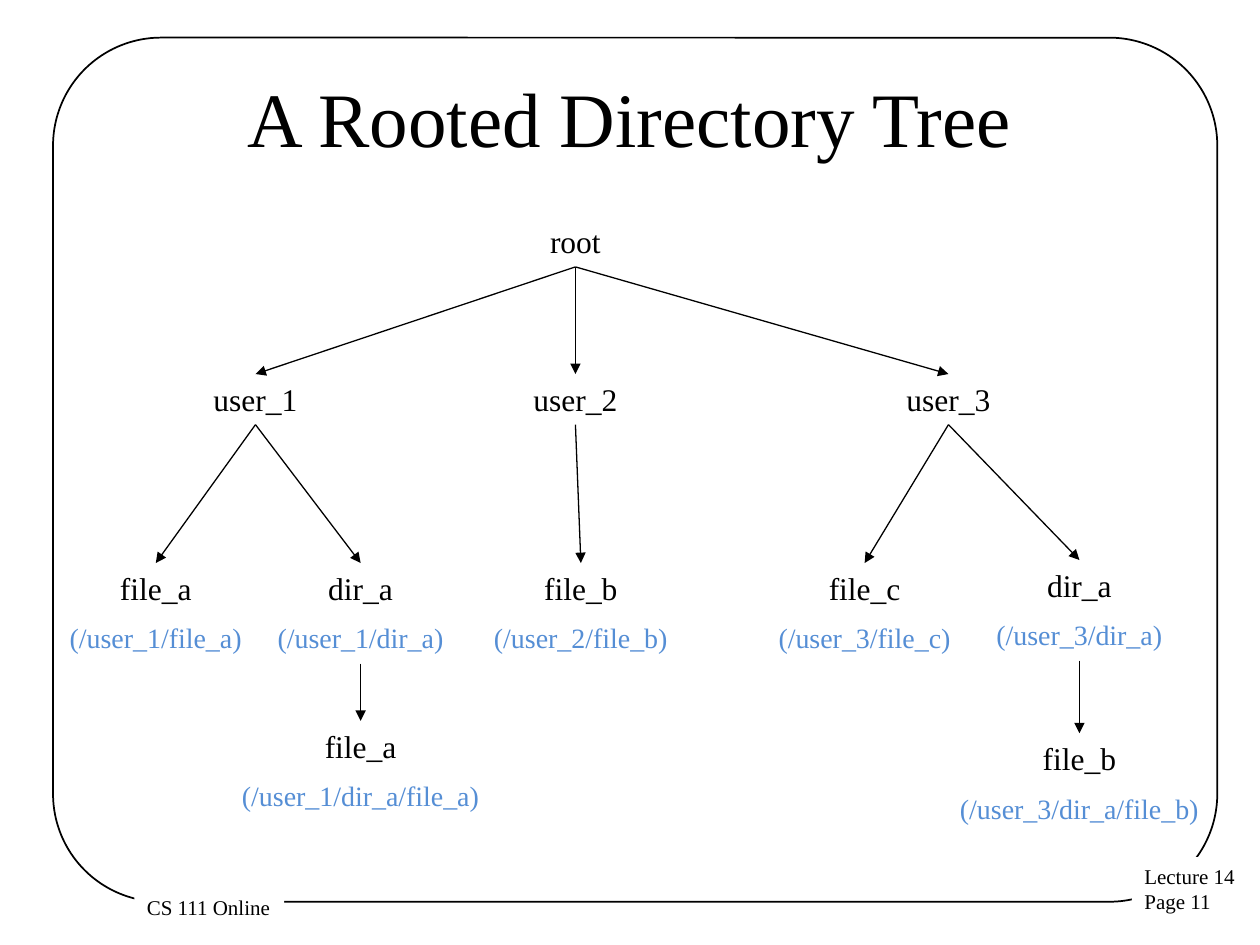
from lxml import etree
from pptx import Presentation
from pptx.dml.color import RGBColor
from pptx.enum.shapes import MSO_CONNECTOR, MSO_SHAPE
from pptx.enum.text import MSO_ANCHOR, PP_ALIGN
from pptx.oxml.ns import qn
from pptx.util import Cm, Pt

LINE = MSO_CONNECTOR.STRAIGHT
ROUND, RECT = MSO_SHAPE.ROUNDED_RECTANGLE, MSO_SHAPE.RECTANGLE
TOP, MIDDLE = MSO_ANCHOR.TOP, MSO_ANCHOR.MIDDLE
LEFT, CENTER = PP_ALIGN.LEFT, PP_ALIGN.CENTER
FONT, BLACK, BLUE, WHITE = "Times New Roman", "000000", "558ED5", "FFFFFF"
LOW, TALL = 1.02, 2.03

TITLE = "A Rooted Directory Tree"
FRAME = (1.07, 0.76, 23.47, 17.42)
LABELS = [
    (["Lecture 14", "Page 11"], (22.82, 17.28, 2.36, 1.3)),
    (["CS 111 Online"], (2.71, 17.91, 3.02, 0.76)),
]
NODES = [
    {"up": None, "name": "root", "mid": 11.6, "top": 4.36, "width": 2.34},
    {"up": "", "name": "user_1", "mid": 5.15, "top": 7.54, "width": 2.97},
    {"up": "", "name": "user_2", "mid": 11.6, "top": 7.54, "width": 2.97},
    {"up": "", "name": "user_3", "mid": 19.12, "top": 7.54, "width": 2.97},
    {"up": "/user_1", "name": "file_a", "mid": 3.14, "top": 11.35, "width": 5.28},
    {"up": "/user_1", "name": "dir_a", "mid": 7.27, "top": 11.35, "width": 4.24},
    {"up": "/user_2", "name": "file_b", "mid": 11.71, "top": 11.35, "width": 4.65},
    {"up": "/user_3", "name": "file_c", "mid": 17.43, "top": 11.35, "width": 4.65},
    {"up": "/user_3", "name": "dir_a", "mid": 21.76, "top": 11.29, "width": 4.45},
    {"up": "/user_1/dir_a", "name": "file_a", "mid": 7.27, "top": 14.53, "width": 7.62},
    {"up": "/user_3/dir_a", "name": "file_b", "mid": 21.76, "top": 14.78, "width": 6.15},
]


def rgb(code):
    """Turn a hex string into a colour."""
    return RGBColor.from_string(code)


def write(frame, lines, align, anchor=TOP, wrap=True, gap=0):
    """Fill a text frame with (text, size, colour) lines."""
    frame.word_wrap, frame.vertical_anchor = wrap, anchor
    for i, (text, size, color) in enumerate(lines):
        para = frame.add_paragraph() if i else frame.paragraphs[0]
        para.alignment = align
        para.space_before = Pt(gap if i else 0)
        run = para.add_run()
        run.text = text
        run.font.name, run.font.size = FONT, Pt(size)
        run.font.color.rgb = rgb(color)


def add_box(slide, kind, area):
    """Add a preset shape without fill, line or shadow."""
    box = slide.shapes.add_shape(kind, *map(Cm, area))
    box.shadow.inherit = False
    box.fill.background()
    box.line.fill.background()
    return box


def add_arrow(slide, start, end):
    """Draw a thin arrow between two points."""
    arrow = slide.shapes.add_connector(LINE, *map(Cm, start + end))
    arrow.line.color.rgb, arrow.line.width = rgb(BLACK), Pt(0.75)
    props = arrow._element.spPr
    tip = etree.SubElement(props.find(qn("a:ln")), qn("a:tailEnd"))
    tip.set("type", "triangle")
    etree.SubElement(props, qn("a:effectLst"))


def add_tree(slide):
    """Place each node and link it to its parent."""
    feet = {}
    for node in NODES:
        up, name, mid, top, width = node.values()
        route = "" if up is None else f"{up}/{name}"
        lines = [(name, 18, BLACK)]
        if up:
            lines.append((f"({route})", 16, BLUE))
        high = TALL if up else LOW
        area = (mid - width / 2, top, width, high)
        box = slide.shapes.add_textbox(*map(Cm, area))
        write(box.text_frame, lines, CENTER, gap=8)
        feet[route] = (mid, top + high)
        if up is not None:
            add_arrow(slide, feet[up], (mid, top))


def main():
    """Build the slide and save it."""
    deck = Presentation()
    deck.slide_width, deck.slide_height = Cm(25.4), Cm(19.05)
    slide = deck.slides.add_slide(deck.slide_layouts[5])

    frame = add_box(slide, ROUND, FRAME)
    frame.adjustments[0] = 0.125
    frame.line.color.rgb, frame.line.width = rgb(BLACK), Pt(1)
    for texts, area in LABELS:
        label = add_box(slide, RECT, area)
        label.fill.solid()
        label.fill.fore_color.rgb = rgb(WHITE)
        lines = [(text, 12, BLACK) for text in texts]
        write(label.text_frame, lines, LEFT, wrap=False)

    title = slide.shapes.title
    title.left, title.top = Cm(1.27), Cm(0.76)
    title.width, title.height = Cm(22.86), Cm(3.18)
    write(title.text_frame, [(TITLE, 44, BLACK)], CENTER, MIDDLE)
    add_tree(slide)
    deck.save("out.pptx")


if __name__ == "__main__":
    main()
